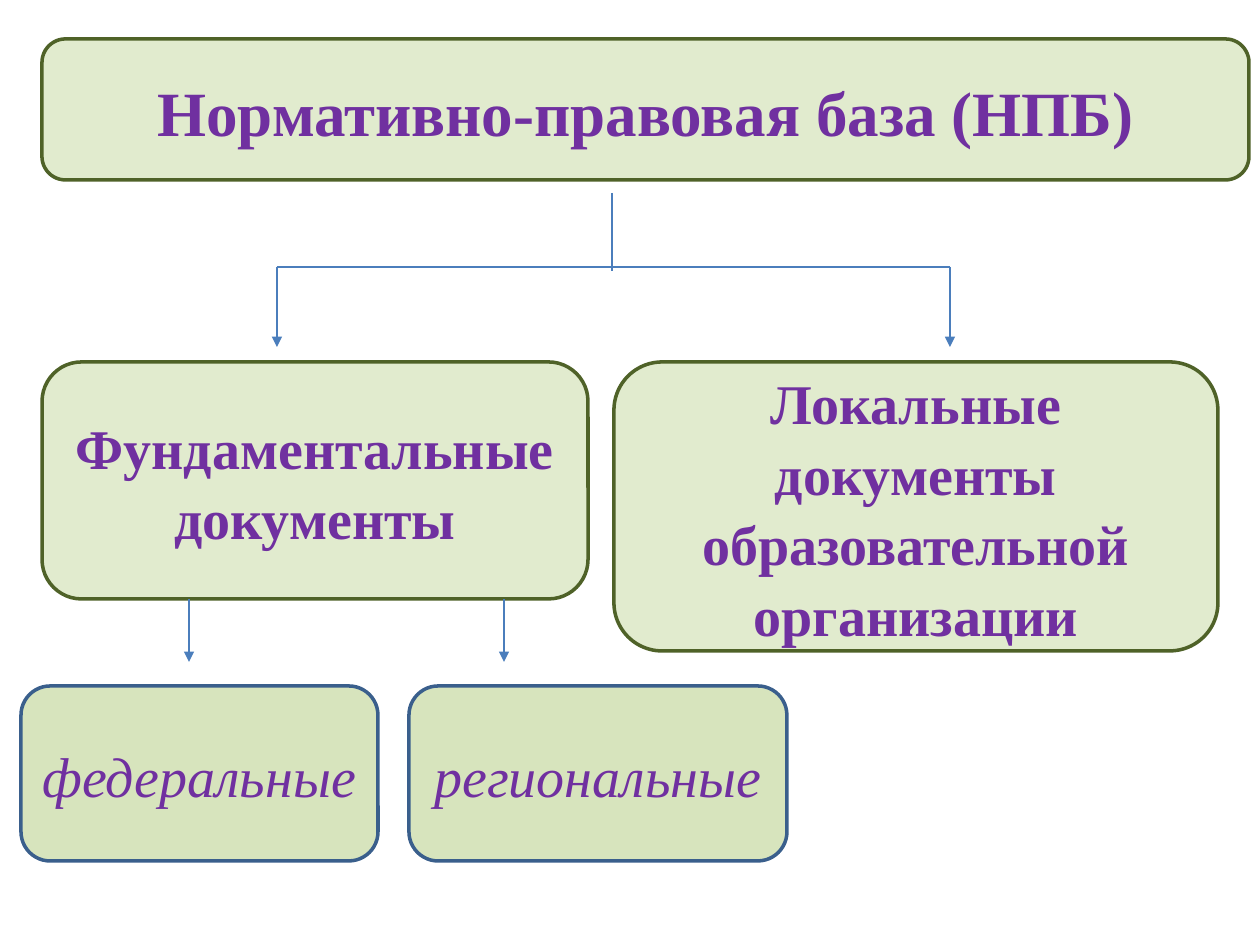
from lxml import etree
from pptx import Presentation, util as u
from pptx.dml.color import RGBColor
from pptx.enum import shapes, text
from pptx.oxml.ns import qn

SCALE = u.Inches(1) / 126
FONT = "Times New Roman"
GREEN, OLIVE, BLUE = "D7E4BD", "4F6228", "3A5F8C"
PURPLE, STEEL = "7030A0", "4B7EBC"


def px(n):
    """Turn px into EMU."""
    return u.Emu(round(n * SCALE))


def paint(fmt, color):
    """Set a solid colour on a fill and return the colour's XML element."""
    fmt.solid()
    fmt.fore_color.rgb = RGBColor.from_string(color)
    return fmt._xPr.find(qn("a:solidFill"))[0]


prs = Presentation()
prs.slide_width, prs.slide_height = px(1260), px(945)
slide = prs.slides.add_slide(prs.slide_layouts[6])

# Boxes: left, top, width, height, words, size, main level
boxes = [
    (42, 39, 1207, 141, "Нормативно-правовая база (НПБ)", 36, True),
    (42, 362, 546, 237, "Фундаментальные документы", 32, True),
    (614, 362, 604, 289, "Локальные документы образовательной организации", 32, True),
    (21, 686, 357, 175, "федеральные", 32, False),
    (409, 686, 378, 175, "региональные", 32, False),
]
for left, top, width, height, words, size, main in boxes:
    box = slide.shapes.add_shape(
        shapes.MSO_SHAPE.ROUNDED_RECTANGLE, px(left), px(top), px(width), px(height))
    box.shadow.inherit = False
    tint = paint(box.fill, GREEN)
    if main:
        etree.SubElement(tint, qn("a:alpha"), val="73000")
    paint(box.line.fill, OLIVE if main else BLUE)
    box.line.width = u.Pt(2)

    frame = box.text_frame
    frame.word_wrap = True
    frame.vertical_anchor = text.MSO_ANCHOR.MIDDLE
    para = frame.paragraphs[0]
    para.alignment = text.PP_ALIGN.CENTER
    para.line_spacing = 1.05
    run = para.add_run()
    run.text = words
    font = run.font
    font.name, font.size = FONT, u.Pt(size)
    font.bold, font.italic = main, not main
    paint(font.fill, PURPLE)

# Lines: start x, start y, end x, end y, arrowhead
lines = [
    (612, 193, 612, 271, False),
    (277, 267, 950, 267, False),
    (277, 267, 277, 347, True),
    (950, 267, 950, 347, True),
    (189, 599, 189, 662, True),
    (504, 599, 504, 662, True),
]
for x1, y1, x2, y2, arrow in lines:
    link = slide.shapes.add_connector(
        shapes.MSO_CONNECTOR.STRAIGHT, px(x1), px(y1), px(x2), px(y2))
    paint(link.line.fill, STEEL)
    link.line.width = u.Pt(0.75)
    if arrow:
        etree.SubElement(link.line._get_or_add_ln(), qn("a:tailEnd"), type="triangle")
    etree.SubElement(link._element.spPr, qn("a:effectLst"))

prs.save("out.pptx")
